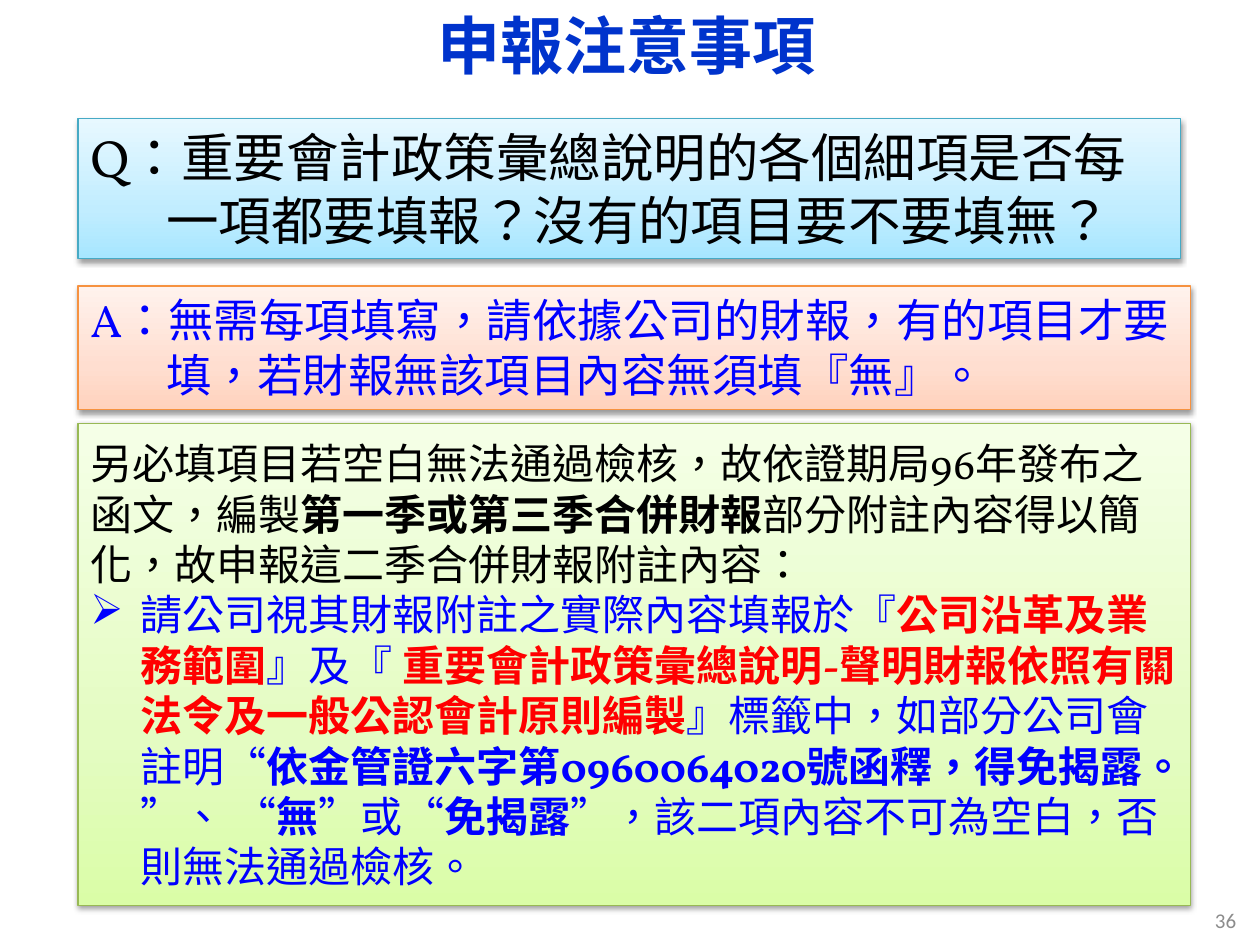
from copy import deepcopy

from pptx import Presentation
from pptx.dml.color import RGBColor
from pptx.enum.lang import MSO_LANGUAGE_ID
from pptx.enum.shapes import MSO_SHAPE
from pptx.enum.text import MSO_ANCHOR, MSO_AUTO_SIZE, PP_ALIGN
from pptx.oxml.ns import qn
from pptx.util import Inches, Pt
from lxml import etree

RECTANGLE = MSO_SHAPE.RECTANGLE
TOP, MIDDLE = MSO_ANCHOR.TOP, MSO_ANCHOR.MIDDLE
LEFT, CENTER, RIGHT = PP_ALIGN.LEFT, PP_ALIGN.CENTER, PP_ALIGN.RIGHT
GROW, FIXED = MSO_AUTO_SIZE.SHAPE_TO_FIT_TEXT, MSO_AUTO_SIZE.NONE
CHINESE = MSO_LANGUAGE_ID.TRADITIONAL_CHINESE

SERIF, SANS, CJK = "Vollkorn", "Calibri", "Noto Sans CJK SC"
BLACK = RGBColor(0x00, 0x00, 0x00)
BLUE = RGBColor(0x00, 0x00, 0xFF)
RED = RGBColor(0xFF, 0x00, 0x00)
TITLE_BLUE = RGBColor(0x00, 0x33, 0xCC)
GRAY = RGBColor(0x8C, 0x8C, 0x8C)

# Each panel theme: bottom, middle and top of the gradient, then the outline
SKY = [RGBColor.from_string(c) for c in ("A7E6FF", "C1EDFF", "E7F8FF", "46AAC5")]
PEACH = [RGBColor.from_string(c) for c in ("FFD2BD", "FFDED0", "FFF2ED", "F69240")]
LIME = [RGBColor.from_string(c) for c in ("DAFDA7", "E4FCC2", "F5FFE7", "98B955")]
STOPS = (0, 0.35, 1)

# Panels share a left edge; the two answer panels share a width
PANEL_LEFT, ANSWER_WIDTH = 0.62, 8.83

QUESTION = "Q：重要會計政策彙總說明的各個細項是否每一項都要填報？沒有的項目要不要填無？"
ANSWER = "A：無需每項填寫，請依據公司的財報，有的項目才要填，若財報無該項目內容無須填『無』。"

# Runs are (text, colour, bold)
INTRODUCTION = [
    ("另必填項目若空白無法通過檢核，故依證期局96年發布之函文，編製", BLACK, False),
    ("第一季或第三季合併財報", BLACK, True),
    ("部分附註內容得以簡化，故申報這二季合併財報附註內容：", BLACK, False),
]
INSTRUCTION = [
    ("請公司視其財報附註之實際內容填報於『", BLUE, False),
    ("公司沿革及業務範圍", RED, True),
    ("』及『 ", BLUE, False),
    ("重要會計政策彙總說明-聲明財報依照有關法令及一般公認會計原則編製", RED, True),
    ("』標籤中，如部分公司會註明“", BLUE, False),
    ("依金管證六字第0960064020號函釋，得免揭露。", BLUE, True),
    ("”、 “", BLUE, False),
    ("無", BLUE, True),
    ("”或“", BLUE, False),
    ("免揭露", BLUE, True),
    ("”，該二項內容不可為空白，否則無法通過檢核。", BLUE, False),
]


def add_runs(paragraph, runs, size, font_name):
    for text, color, bold in runs:
        run = paragraph.add_run()
        run.text = text
        font = run.font
        font.size, font.name, font.bold = Pt(size), font_name, bold
        font.color.rgb = color
        font.language_id = CHINESE
        latin = font._element.find(qn("a:latin"))
        east_asian = etree.Element(qn("a:ea"), typeface=CJK)
        latin.addnext(east_asian)


def set_hanging(paragraph, indent, bullet=None):
    properties = paragraph._p.get_or_add_pPr()
    properties.set("marL", str(Inches(indent)))
    properties.set("indent", str(-Inches(indent)))
    if bullet:
        etree.SubElement(properties, qn("a:buChar"), char=bullet)


def add_label(slide, box, run, size, font_name, alignment):
    shape = slide.shapes.add_textbox(*map(Inches, box))
    frame = shape.text_frame
    frame.word_wrap = True
    frame.vertical_anchor = MIDDLE
    paragraph = frame.paragraphs[0]
    paragraph.alignment = alignment
    add_runs(paragraph, [run], size, font_name)


def fill_gradient(shape, colors):
    shape.fill.gradient()
    shape.fill.gradient_angle = 90
    first = shape._element.spPr.find(".//" + qn("a:gs"))
    first.addnext(deepcopy(first))
    for stop, position, color in zip(shape.fill.gradient_stops, STOPS, colors):
        stop.position = position
        stop.color.rgb = color


def add_shadow(shape):
    shape.shadow.inherit = False
    effects = shape._element.spPr.find(qn("a:effectLst"))
    shadow = etree.SubElement(
        effects, qn("a:outerShdw"), blurRad=str(Pt(3.1)), dist=str(Pt(1.6)),
        dir="5400000", rotWithShape="0")
    color = etree.SubElement(shadow, qn("a:srgbClr"), val=str(BLACK))
    etree.SubElement(color, qn("a:alpha"), val="38000")


def add_panel(slide, top, width, height, theme, anchor, auto_size):
    shape = slide.shapes.add_shape(
        RECTANGLE, *map(Inches, (PANEL_LEFT, top, width, height)))
    *gradient, outline = theme
    fill_gradient(shape, gradient)
    shape.line.color.rgb = outline
    shape.line.width = Pt(0.75)
    add_shadow(shape)
    frame = shape.text_frame
    frame.word_wrap = True
    frame.vertical_anchor = anchor
    frame.auto_size = auto_size
    frame.paragraphs[0].alignment = LEFT
    return frame


def add_statement(slide, top, width, height, theme, text, size, color):
    frame = add_panel(slide, top, width, height, theme, TOP, GROW)
    paragraph = frame.paragraphs[0]
    set_hanging(paragraph, 0.6)
    add_runs(paragraph, [(text, color, False)], size, SERIF)


def add_details(slide):
    frame = add_panel(slide, 3.36, ANSWER_WIDTH, 3.83, LIME, MIDDLE, FIXED)
    add_runs(frame.paragraphs[0], INTRODUCTION, 24, SERIF)
    paragraph = frame.add_paragraph()
    paragraph.alignment = LEFT
    set_hanging(paragraph, 0.4, "➢")
    add_runs(paragraph, INSTRUCTION, 24, SERIF)


def main():
    presentation = Presentation()
    presentation.slide_width = Inches(10)
    presentation.slide_height = Inches(7.5)
    slide = presentation.slides.add_slide(presentation.slide_layouts[6])

    # Page number and title
    add_label(slide, (7.58, 7.1, 2.33, 0.4), ("36", GRAY, False), 12, SANS, RIGHT)
    add_label(slide, (0.47, 0.07, 9, 0.56), ("申報注意事項", TITLE_BLUE, True),
              36, CJK, CENTER)

    # Question, answer and filing details
    add_statement(slide, 0.94, 8.75, 1.11, SKY, QUESTION, 30, BLACK)
    add_statement(slide, 2.27, ANSWER_WIDTH, 0.98, PEACH, ANSWER, 26, BLUE)
    add_details(slide)

    presentation.save("out.pptx")


if __name__ == "__main__":
    main()
